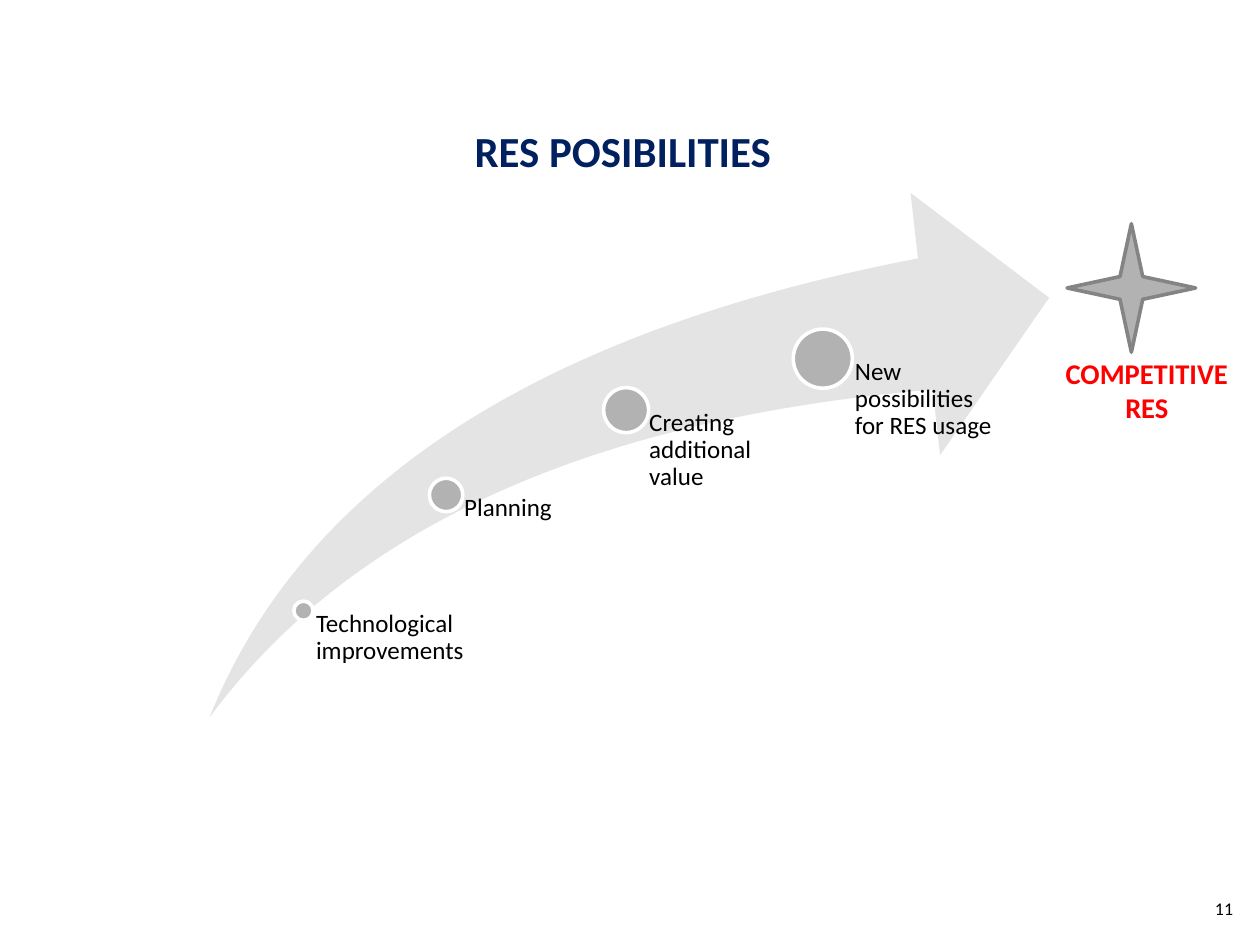
from pptx import Presentation
from pptx.dml.color import RGBColor
from pptx.enum.shapes import MSO_SHAPE as Kind
from pptx.enum.text import MSO_ANCHOR as Anchor, PP_ALIGN as Align
from pptx.util import Inches, Pt

# Dot centre from the arrow's corner, dot size, label inset, label width, label
STEPS = [
    (0.73, 3.25, 0.15, 0.1, 1.57, "Technological improvements"),
    (1.84, 2.35, 0.26, 0.14, 1.37, "Planning"),
    (3.24, 1.69, 0.35, 0.18, 1.37, "Creating additional value"),
    (4.77, 1.29, 0.46, 0.25, 1.37, "New possibilities for RES usage"),
]
GREY = "B2B2B2"


def color(code):
    return RGBColor.from_string(code)


def add_text(shapes, box, text, size, ink="000000", bold=False,
             align=Align.LEFT, inset=(0, 0, 0, 0), wrap=True, space=1.0):
    frame = shapes.add_textbox(*map(Inches, box)).text_frame
    left, top, right, bottom = map(Inches, inset)
    form = {"word_wrap": wrap, "vertical_anchor": Anchor.TOP,
            "margin_left": left, "margin_top": top,
            "margin_right": right, "margin_bottom": bottom}
    for name, value in form.items():
        setattr(frame, name, value)
    para = frame.paragraphs[0]
    para.text = text
    para.alignment = align
    para.line_spacing = space
    for name, value in {"name": "Calibri", "size": Pt(size), "bold": bold}.items():
        setattr(para.font, name, value)
    para.font.color.rgb = color(ink)


def add_form(shapes, kind, box, fill, edge=None):
    shape = shapes.add_shape(kind, *map(Inches, box))
    shape.shadow.inherit = False
    shape.fill.solid()
    shape.fill.fore_color.rgb = color(fill)
    if edge:
        shape.line.color.rgb = color(edge)
        shape.line.width = Pt(2)
    else:
        shape.line.fill.background()
    return shape


def add_path(slide, box):
    """Rising arrow with a growing dot and a label for each step."""
    left, top, wide, high = box
    shapes = slide.shapes.add_group_shape().shapes
    arrow = add_form(shapes, Kind.SWOOSH_ARROW, box, "E4E4E4")
    arrow.adjustments[0] = arrow.adjustments[1] = 0.25
    base = top + high + 0.13
    for dx, dy, size, inset, width, label in STEPS:
        x, y = left + dx, top + dy
        add_form(shapes, Kind.OVAL, (x - size / 2, y - size / 2, size, size),
                 GREY, "FFFFFF")
        add_text(shapes, (x, y, width, base - y), label, 14,
                 inset=(inset, 0, 0, 0), space=0.9)


def add_goal(slide, box):
    """Star with the goal written below it."""
    left, top, wide, high = box
    add_text(slide.shapes, (left, top + 0.98, wide, high - 0.98),
             "COMPETITIVE\vRES", 16, "FF0000", True, Align.CENTER,
             (0.1, 0.05, 0.1, 0.05))
    add_form(slide.shapes, Kind.STAR_4_POINT, (left + 0.13, top, 1, 1),
             GREY, "848484")


def main():
    deck = Presentation()
    deck.slide_width, deck.slide_height = Inches(9.8), Inches(7.35)
    slide = deck.slides.add_slide(deck.slide_layouts[6])
    # Title and page number
    add_text(slide.shapes, (0.13, 0.97, 9.43, 0.4), "RES POSIBILITIES", 24,
             "002060", True, Align.CENTER)
    add_text(slide.shapes, (9.45, 6.98, 0.21, 0.17), "11", 10, wrap=False)
    # Steps and goal
    add_path(slide, (1.63, 1.5, 6.53, 4.08))
    add_goal(slide, (8.17, 1.74, 1.5, 1.62))
    deck.save("out.pptx")


if __name__ == "__main__":
    main()
